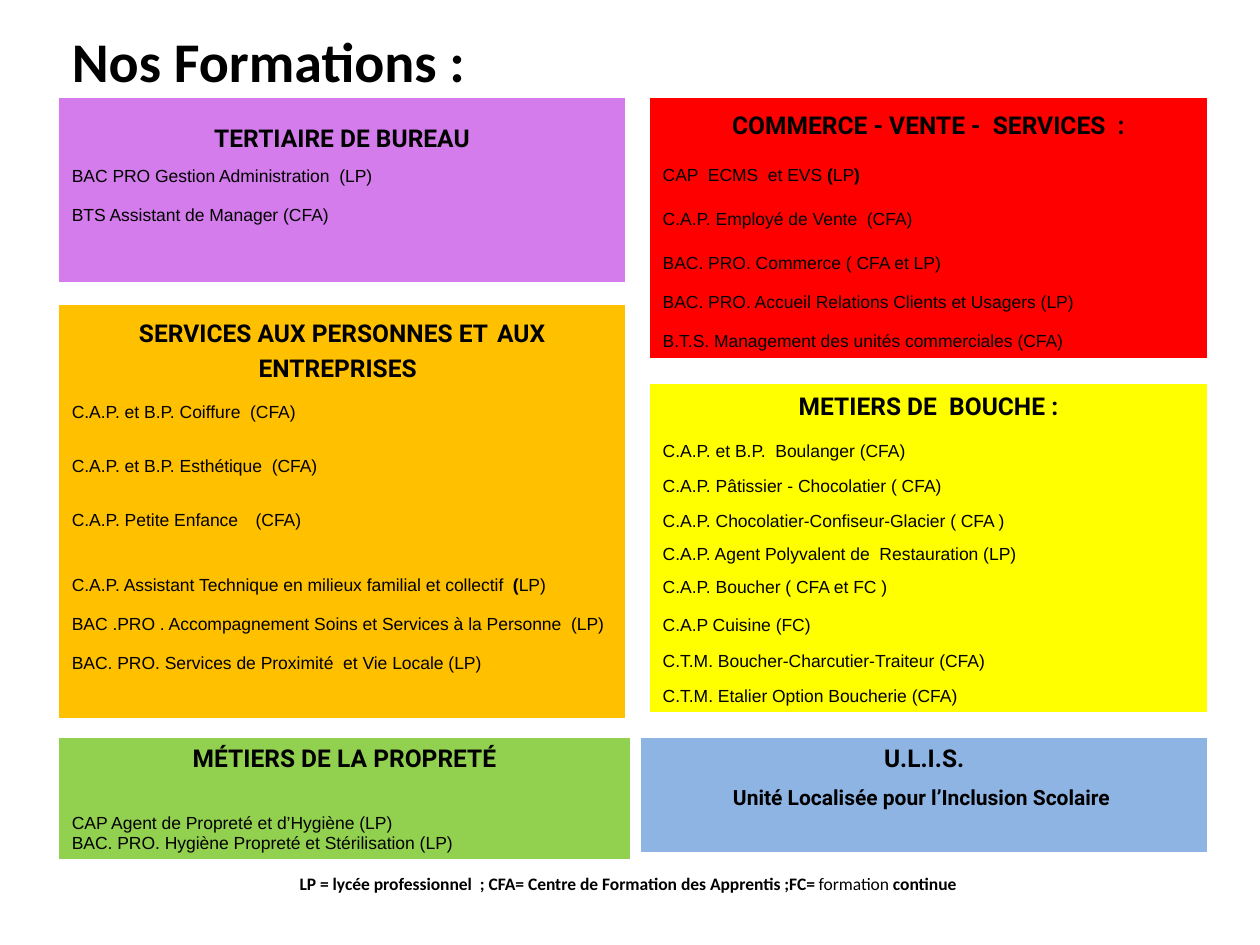
from pptx import Presentation
from pptx.dml.color import RGBColor
from pptx.enum.text import MSO_ANCHOR, PP_ALIGN
from pptx.util import Inches, Pt

LEFT, CENTER = PP_ALIGN.LEFT, PP_ALIGN.CENTER
BOTTOM, MIDDLE = MSO_ANCHOR.BOTTOM, MSO_ANCHOR.MIDDLE

BLACK = RGBColor(0x00, 0x00, 0x00)
RED = RGBColor(0xFF, 0x00, 0x00)
PURPLE = RGBColor(0xD4, 0x7C, 0xEC)
YELLOW = RGBColor(0xFF, 0xFF, 0x00)
BLUE = RGBColor(0x8E, 0xB4, 0xE3)
ORANGE = RGBColor(0xFF, 0xC0, 0x00)
GREEN = RGBColor(0x92, 0xD0, 0x50)

NO_STYLE_NO_GRID = "{2D5ABB26-0587-4C30-8999-92F81FD0307C}"
LINE_GAP = 11  # points between separated lines of one cell
COL_LEFT, COL_RIGHT = 0.47, 5.16

# A paragraph is a list of runs: (text, size, font, bold).
# A row is (height, paragraphs, alignment, space before, bottom margin).


def head(text, size=14):
    return (text, size, "Roboto", True)


def item(text, size=10, bold=False):
    return (text, size, "Arial", bold)


def title_row(height, *runs, bottom=0.05):
    return (height, [list(runs)], CENTER, 0, bottom)


def item_row(height, *lines, gap=LINE_GAP, bottom=0.05):
    paragraphs = [[item(x)] if isinstance(x, str) else x for x in lines]
    return (height, paragraphs, LEFT, gap, bottom)


def add_runs(p, runs):
    for text, size, font, bold in runs:
        r = p.add_run()
        r.text = text
        r.font.size = Pt(size)
        r.font.name = font
        r.font.bold = bold
        r.font.color.rgb = BLACK


def fill_cell(cell, color, paragraphs, align, gap, bottom):
    cell.fill.solid()
    cell.fill.fore_color.rgb = color
    cell.vertical_anchor = BOTTOM
    cell.margin_bottom = Inches(bottom)
    tf = cell.text_frame
    for i, runs in enumerate(paragraphs):
        p = tf.add_paragraph() if i else tf.paragraphs[0]
        p.alignment = align
        if i:
            p.space_before = Pt(gap)
        add_runs(p, runs)


def add_block(s, left, top, width, color, rows):
    height = sum(row[0] for row in rows)
    frame = s.shapes.add_table(len(rows), 1, Inches(left), Inches(top),
                               Inches(width), Inches(height))
    table = frame.table
    table.first_row = False
    table.horz_banding = False
    table._tbl.tblPr[0].text = NO_STYLE_NO_GRID
    for i, (row_height, *content) in enumerate(rows):
        table.rows[i].height = Inches(row_height)
        fill_cell(table.cell(i, 0), color, *content)


def set_title(s, text):
    sp = s.shapes.title
    sp.left, sp.top = Inches(COL_LEFT), Inches(0.16)
    sp.width, sp.height = Inches(3.89), Inches(0.64)
    tf = sp.text_frame
    tf.word_wrap = False
    tf.vertical_anchor = MIDDLE
    p = tf.paragraphs[0]
    p.alignment = LEFT
    add_runs(p, [(text, 32, "Calibri", True)])


def add_legend(s, runs):
    sp = s.shapes.add_textbox(Inches(COL_LEFT), Inches(6.88),
                              Inches(9.06), Inches(0.27))
    tf = sp.text_frame
    tf.word_wrap = True
    p = tf.paragraphs[0]
    p.alignment = CENTER
    add_runs(p, [(text, 10, "Calibri", bold) for text, bold in runs])


def main():
    prs = Presentation()
    prs.slide_width, prs.slide_height = Inches(10), Inches(7.5)
    s = prs.slides.add_slide(prs.slide_layouts[5])
    set_title(s, "Nos Formations :")

    # Left column
    add_block(s, COL_LEFT, 0.78, 4.49, PURPLE, [
        title_row(0.49, head("TERTIAIRE DE BUREAU")),
        item_row(0.25, "BAC PRO Gestion Administration  (LP)"),
        item_row(0.31, "BTS Assistant de Manager (CFA)"),
        item_row(0.39),
    ])
    add_block(s, COL_LEFT, 2.42, 4.49, ORANGE, [
        title_row(0.68, head("SERVICES AUX PERSONNES ET"), item(" ", 18, True),
                  head("AUX ENTREPRISES"), item(" ", 18, True)),
        item_row(0.3, "C.A.P. et B.P. Coiffure  (CFA)"),
        item_row(0.43, "C.A.P. et B.P. Esthétique  (CFA)"),
        item_row(0.45, [item("C.A.P. Petite Enfance"), item("  ", 18),
                        item("(CFA)")]),
        item_row(1.42,
                 [item("C.A.P. Assistant Technique en milieux familial et collectif  "),
                  item("(", bold=True), item("LP)")],
                 "BAC .PRO . Accompagnement Soins et Services à la Personne  (LP)",
                 "BAC. PRO. Services de Proximité  et Vie Locale (LP)",
                 bottom=0.36),
    ])
    add_block(s, COL_LEFT, 5.86, 4.53, GREEN, [
        title_row(0.33, head("MÉTIERS DE LA PROPRETÉ")),
        item_row(0.63, "CAP Agent de Propreté et d’Hygiène (LP)",
                 "BAC. PRO. Hygiène Propreté et Stérilisation (LP)", gap=0),
    ])

    # Right column
    add_block(s, COL_RIGHT, 0.78, 4.42, RED, [
        title_row(0.39, head("COMMERCE - VENTE -  SERVICES  :")),
        item_row(0.35, [item("CAP  ECMS  et EVS "), item("(", bold=True),
                        item("LP"), item(")", bold=True)]),
        item_row(0.35, "C.A.P. Employé de Vente  (CFA)"),
        item_row(0.35, "BAC. PRO. Commerce ( CFA et LP)"),
        item_row(0.62, "BAC. PRO. Accueil Relations Clients et Usagers (LP)",
                 "B.T.S. Management des unités commerciales (CFA)"),
    ])
    add_block(s, COL_RIGHT, 3.05, 4.42, YELLOW, [
        title_row(0.35, head("METIERS DE  BOUCHE :")),
        item_row(0.31, "C.A.P. et B.P.  Boulanger (CFA)"),
        item_row(0.28, "C.A.P. Pâtissier - Chocolatier ( CFA)"),
        item_row(0.28, "C.A.P. Chocolatier-Confiseur-Glacier ( CFA )"),
        item_row(0.25, "C.A.P. Agent Polyvalent de  Restauration (LP)"),
        item_row(0.57, "C.A.P. Boucher ( CFA et FC )", "C.A.P Cuisine (FC)"),
        item_row(0.28, "C.T.M. Boucher-Charcutier-Traiteur (CFA)"),
        item_row(0.28, "C.T.M. Etalier Option Boucherie (CFA)"),
    ])
    add_block(s, 5.09, 5.86, 4.49, BLUE, [
        title_row(0.33, head("U.L.I.S.")),
        title_row(0.57, head("Unité Localisée pour l’Inclusion Scolaire ", 12),
                  bottom=0.33),
    ])

    # Abbreviations
    add_legend(s, [
        ("LP = lycée professionnel  ; CFA= Centre de Formation des Apprentis ;FC= ", True),
        ("formation", False),
        (" continue ", True),
    ])
    prs.save("out.pptx")


if __name__ == "__main__":
    main()
